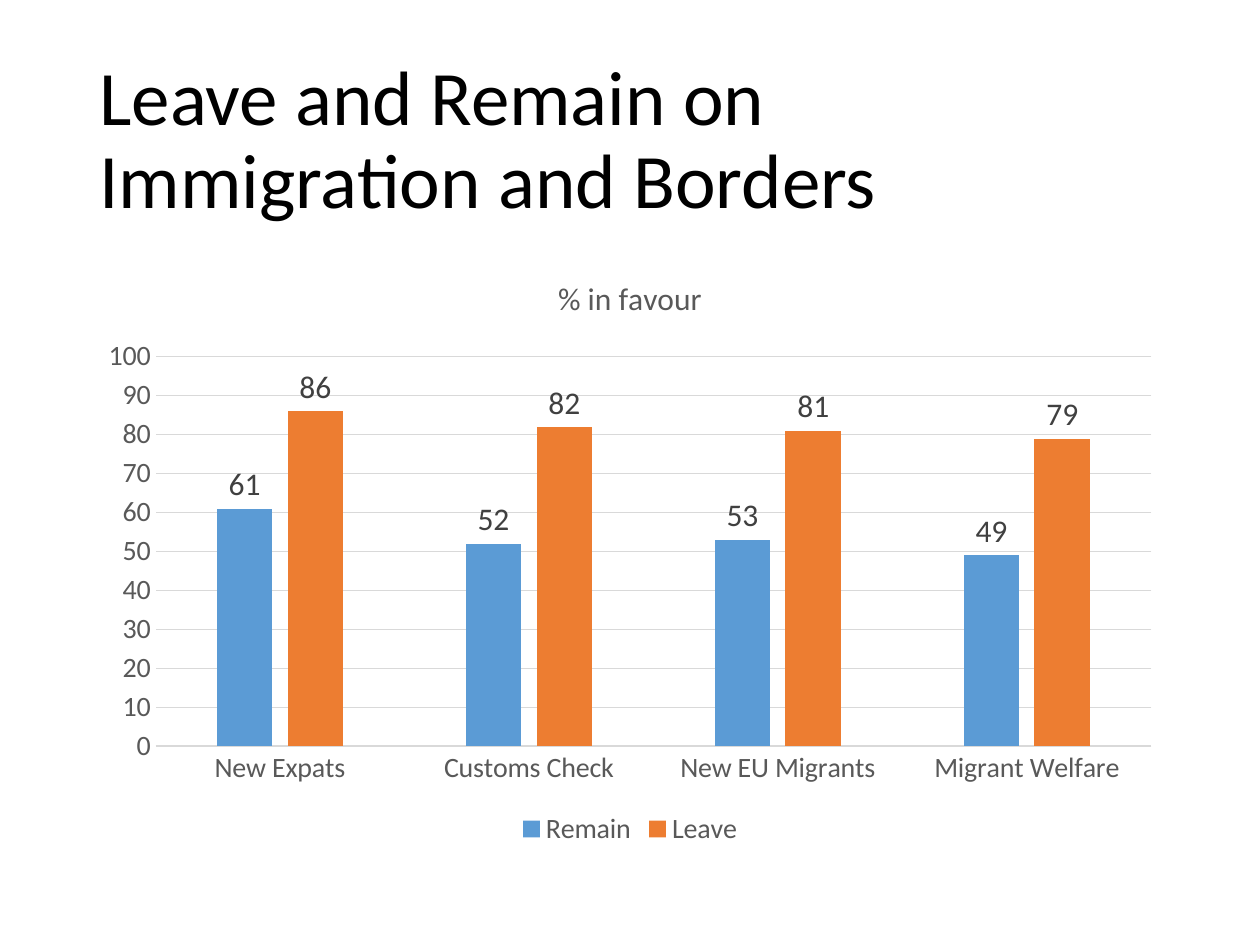
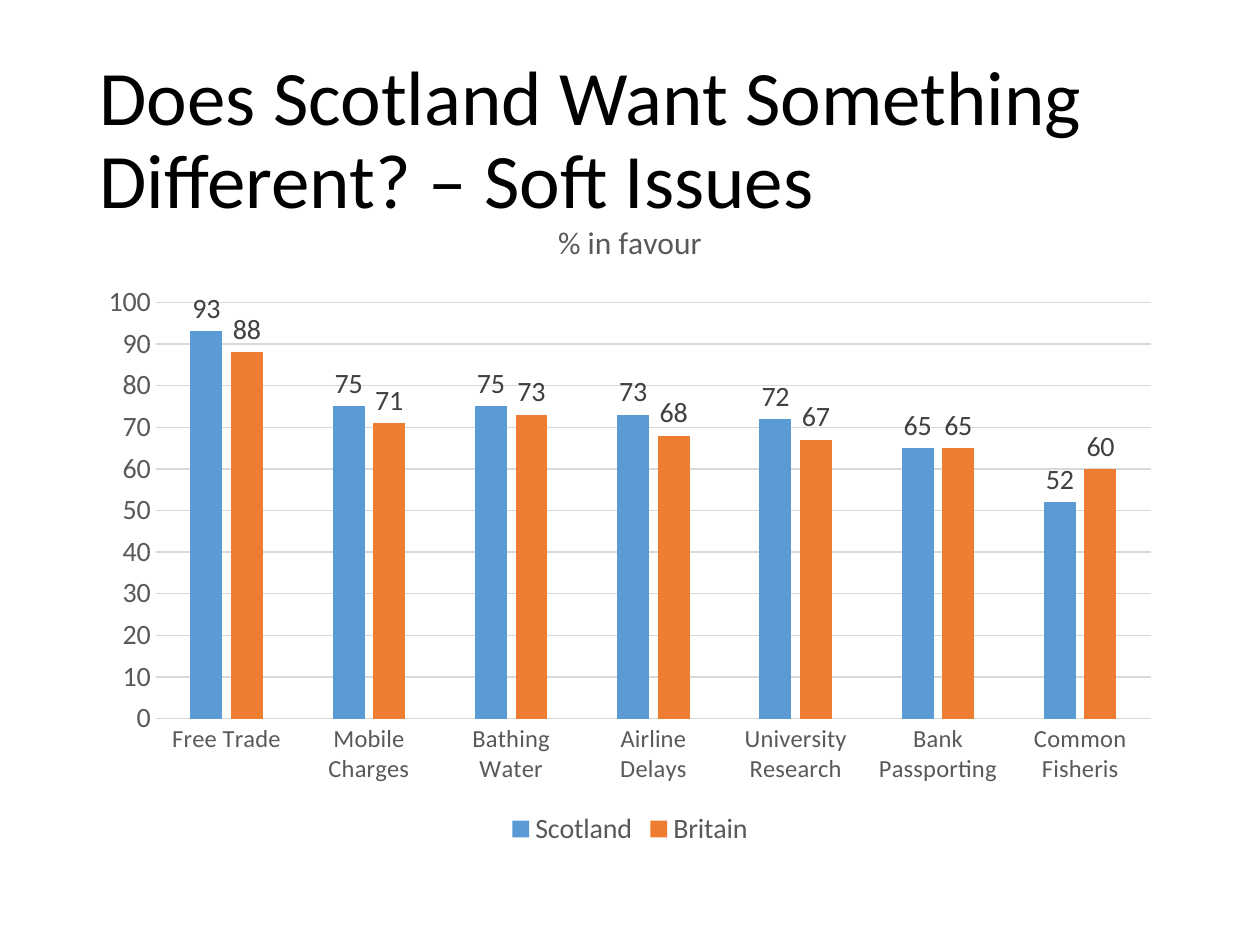
"""Build two slides of clustered column charts on attitudes to Brexit issues."""
from dataclasses import dataclass

import pptx
import pptx.chart.data
import pptx.dml.color
import pptx.enum.chart
import pptx.enum.text
import pptx.util
from pptx.util import Inches


@dataclass(frozen=True)
class Theme:
    """Colours, type sizes and the frame that the slides share."""
    font: str = "Calibri"
    background: str = "FFFFFF"
    title_colour: str = "000000"
    text_colour: str = "595959"
    label_colour: str = "404040"
    line_colour: str = "D9D9D9"
    series_colours: tuple = ("5B9BD5", "ED7D31")
    title_size: int = 44
    chart_title_size: int = 18
    axis_size: int = 16
    line_width: float = 0.75
    left: float = 0.69
    width: float = 8.62
    title_top: float = 0.4
    title_height: float = 1.45
    chart_bottom: float = 6.76


THEME = Theme()


def rgb(colour):
    """Return the colour object for a hex string."""
    return pptx.dml.color.RGBColor.from_string(colour)


def style_font(font, size, colour):
    """Set the shared typeface with a size and colour."""
    font.name = THEME.font
    font.size = pptx.util.Pt(size)
    font.bold = False
    font.color.rgb = rgb(colour)


def style_line(line):
    """Give a chart line the pale shared stroke."""
    line.color.rgb = rgb(THEME.line_colour)
    line.width = pptx.util.Pt(THEME.line_width)


def add_title_slide(presentation, title):
    """Add a title-only slide with its title placed and formatted."""
    slide = presentation.slides.add_slide(presentation.slide_layouts[5])
    slide.background.fill.solid()
    slide.background.fill.fore_color.rgb = rgb(THEME.background)
    shape = slide.shapes.title
    shape.left, shape.top = Inches(THEME.left), Inches(THEME.title_top)
    shape.width, shape.height = Inches(THEME.width), Inches(THEME.title_height)
    text_frame = shape.text_frame
    text_frame.text = title
    text_frame.auto_size = pptx.enum.text.MSO_AUTO_SIZE.NONE
    text_frame.vertical_anchor = pptx.enum.text.MSO_ANCHOR.MIDDLE
    paragraph = text_frame.paragraphs[0]
    paragraph.alignment = pptx.enum.text.PP_ALIGN.LEFT
    paragraph.line_spacing = 0.9
    style_font(paragraph.font, THEME.title_size, THEME.title_colour)
    return slide


def style_axes(chart, category_size):
    """Format both axes and the value gridlines."""
    category_axis, value_axis = chart.category_axis, chart.value_axis
    for axis, size in ((category_axis, category_size), (value_axis, THEME.axis_size)):
        axis.major_tick_mark = pptx.enum.chart.XL_TICK_MARK.NONE
        axis.minor_tick_mark = pptx.enum.chart.XL_TICK_MARK.NONE
        style_font(axis.tick_labels.font, size, THEME.text_colour)
    style_line(category_axis.format.line)
    value_axis.format.line.fill.background()
    value_axis.minimum_scale, value_axis.maximum_scale = 0, 100
    value_axis.major_unit = 10
    value_axis.has_major_gridlines = True
    style_line(value_axis.major_gridlines.format.line)


def style_series(plot, label_size):
    """Colour the columns and put a value above each."""
    plot.gap_width, plot.overlap = 219, -27
    plot.vary_by_categories = False
    for series, colour in zip(plot.series, THEME.series_colours):
        series.format.fill.solid()
        series.format.fill.fore_color.rgb = rgb(colour)
        labels = series.data_labels
        labels.show_value = True
        labels.position = pptx.enum.chart.XL_LABEL_POSITION.OUTSIDE_END
        style_font(labels.font, label_size, THEME.label_colour)


def add_favour_chart(slide, top, categories, series, category_size, label_size):
    """Add a column chart of the percentage in favour."""
    chart_data = pptx.chart.data.CategoryChartData()
    chart_data.categories = categories
    for name, values in series.items():
        chart_data.add_series(name, values)
    chart = slide.shapes.add_chart(
        pptx.enum.chart.XL_CHART_TYPE.COLUMN_CLUSTERED,
        Inches(THEME.left), Inches(top),
        Inches(THEME.width), Inches(THEME.chart_bottom - top), chart_data).chart
    style_font(chart.font, 10, THEME.title_colour)
    chart.has_title = True
    chart.chart_title.include_in_layout = False
    chart.chart_title.text_frame.text = "% in favour"
    style_font(chart.chart_title.text_frame.paragraphs[0].font,
               THEME.chart_title_size, THEME.text_colour)
    chart.has_legend = True
    chart.legend.position = pptx.enum.chart.XL_LEGEND_POSITION.BOTTOM
    chart.legend.include_in_layout = False
    style_font(chart.legend.font, THEME.axis_size, THEME.text_colour)
    style_axes(chart, category_size)
    style_series(chart.plots[0], label_size)


def main():
    """Build and save the presentation."""
    presentation = pptx.Presentation()
    presentation.slide_width, presentation.slide_height = Inches(10), Inches(7.5)

    slide = add_title_slide(presentation, "Leave and Remain on Immigration and Borders")
    add_favour_chart(
        slide, 2,
        ["New Expats", "Customs Check", "New EU Migrants", "Migrant Welfare"],
        {"Remain": (61, 52, 53, 49), "Leave": (86, 82, 81, 79)},
        category_size=16, label_size=18)

    slide = add_title_slide(
        presentation, "Does Scotland Want Something Different? – Soft Issues")
    add_favour_chart(
        slide, 1.55,
        ["Free Trade", "Mobile Charges", "Bathing Water", "Airline Delays",
         "University Research", "Bank Passporting", "Common Fisheris"],
        {"Scotland": (93, 75, 75, 73, 72, 65, 52),
         "Britain": (88, 71, 73, 68, 67, 65, 60)},
        category_size=14, label_size=16)

    presentation.save("out.pptx")


if __name__ == "__main__":
    main()
